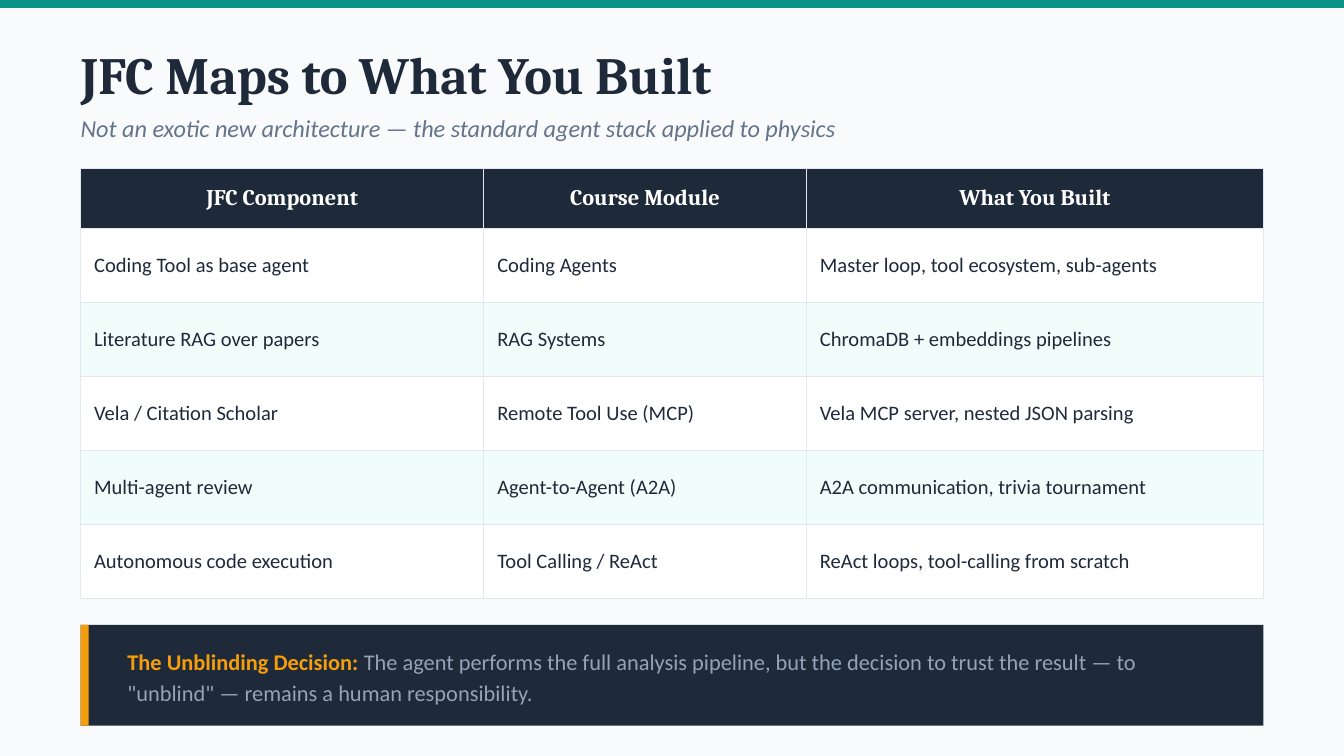
import dataclasses
import typing

import lxml.etree
import pptx
import pptx.dml.color
import pptx.enum.shapes
import pptx.enum.text
import pptx.oxml.ns
import pptx.util

EMU_PER_PX = 4572
LEFT, WIDTH = 120, 1760
CALLOUT_TOP, CALLOUT_HEIGHT = 930, 150

Align = pptx.enum.text.PP_ALIGN
Anchor = pptx.enum.text.MSO_ANCHOR


@dataclasses.dataclass(frozen=True)
class Theme:
    background: str = "F8FAFC"
    teal: str = "0D9488"
    navy: str = "1E2A3A"
    slate: str = "64748B"
    mist: str = "94A3B8"
    amber: str = "F59E0B"
    white: str = "FFFFFF"
    mint: str = "F0FDFA"
    border: str = "E2E8F0"
    heading_font: str = "Cambria"
    body_font: str = "Calibri"
    title_size: int = 28
    subtitle_size: int = 13
    label_size: int = 12
    cell_size: int = 11


THEME = Theme()


@dataclasses.dataclass(frozen=True)
class Box:
    left: int
    top: int
    width: int
    height: int

    def emu(self) -> tuple[int, ...]:
        return tuple(px(value) for value in dataclasses.astuple(self))


@dataclasses.dataclass(frozen=True)
class TextStyle:
    color: str
    font: dict[str, typing.Any]


@dataclasses.dataclass(frozen=True)
class Panel:
    box: Box
    color: str


def px(value: int) -> pptx.util.Emu:
    return pptx.util.Emu(value * EMU_PER_PX)


def text_style(color: str, name: str, size: int, bold: bool = False,
               italic: bool = False) -> TextStyle:
    return TextStyle(color, {"name": name, "size": pptx.util.Pt(size),
                             "bold": bold, "italic": italic})


TITLE = text_style(THEME.navy, THEME.heading_font, THEME.title_size, bold=True)
SUBTITLE = text_style(THEME.slate, THEME.body_font, THEME.subtitle_size, italic=True)
HEADER = text_style(THEME.white, THEME.heading_font, THEME.label_size, bold=True)
CELL = text_style(THEME.navy, THEME.body_font, THEME.cell_size)
CALLOUT_LABEL = text_style(THEME.amber, THEME.body_font, THEME.label_size, bold=True)
CALLOUT_TEXT = text_style(THEME.mist, THEME.body_font, THEME.label_size)

PANELS = [
    Panel(Box(0, 0, 2000, 12), THEME.teal),
    Panel(Box(LEFT, CALLOUT_TOP, WIDTH, CALLOUT_HEIGHT), THEME.navy),
    Panel(Box(LEFT, CALLOUT_TOP, 12, CALLOUT_HEIGHT), THEME.amber),
]
COLUMN_WIDTHS = [600, 480, 680]
ROW_HEIGHTS = [90] + [110] * 5
ROWS = [
    ("JFC Component", "Course Module", "What You Built"),
    ("Coding Tool as base agent", "Coding Agents", "Master loop, tool ecosystem, sub-agents"),
    ("Literature RAG over papers", "RAG Systems", "ChromaDB + embeddings pipelines"),
    ("Vela / Citation Scholar", "Remote Tool Use (MCP)", "Vela MCP server, nested JSON parsing"),
    ("Multi-agent review", "Agent-to-Agent (A2A)", "A2A communication, trivia tournament"),
    ("Autonomous code execution", "Tool Calling / ReAct", "ReAct loops, tool-calling from scratch"),
]


def set_attributes(target: typing.Any, values: dict[str, typing.Any]) -> None:
    for name, value in values.items():
        setattr(target, name, value)


def set_fill(fill: typing.Any, color: str) -> None:
    fill.solid()
    fill.fore_color.rgb = pptx.dml.color.RGBColor.from_string(color)


def add_run(paragraph: typing.Any, text: str, style: TextStyle) -> None:
    run = paragraph.add_run()
    run.text = text
    set_attributes(run.font, style.font)
    run.font.color.rgb = pptx.dml.color.RGBColor.from_string(style.color)


def add_panel(slide: typing.Any, panel: Panel) -> None:
    shape = slide.shapes.add_shape(
        pptx.enum.shapes.MSO_SHAPE.RECTANGLE, *panel.box.emu())
    shape.shadow.inherit = False
    set_fill(shape.fill, panel.color)
    shape.line.fill.background()


def format_frame(shape: typing.Any, margin: int | None = None) -> typing.Any:
    frame = shape.text_frame
    values = {"word_wrap": True, "vertical_anchor": Anchor.MIDDLE,
              "auto_size": pptx.enum.text.MSO_AUTO_SIZE.NONE}
    if margin is not None:
        for side in ("left", "top", "right", "bottom"):
            values[f"margin_{side}"] = px(margin)
    set_attributes(frame, values)
    paragraph = frame.paragraphs[0]
    paragraph.alignment = Align.LEFT
    return paragraph


def set_borders(cell: typing.Any) -> None:
    properties = cell._tc.get_or_add_tcPr()
    qualified = pptx.oxml.ns.qn
    for index, side in enumerate(("lnL", "lnR", "lnT", "lnB")):
        line = lxml.etree.Element(qualified(f"a:{side}"), w=str(pptx.util.Pt(0.5)))
        fill = lxml.etree.SubElement(line, qualified("a:solidFill"))
        lxml.etree.SubElement(fill, qualified("a:srgbClr"), val=THEME.border)
        properties.insert(index, line)


def add_module_table(slide: typing.Any) -> None:
    box = Box(LEFT, 250, WIDTH, sum(ROW_HEIGHTS))
    table = slide.shapes.add_table(len(ROWS), len(COLUMN_WIDTHS), *box.emu()).table
    for column, width in zip(table.columns, COLUMN_WIDTHS):
        column.width = px(width)
    for row_index, (row, height, texts) in enumerate(zip(table.rows, ROW_HEIGHTS, ROWS)):
        row.height = px(height)
        is_header = row_index == 0
        band = THEME.white if row_index % 2 else THEME.mint
        for cell, text in zip(row.cells, texts):
            cell.vertical_anchor = Anchor.MIDDLE
            set_fill(cell.fill, THEME.navy if is_header else band)
            set_borders(cell)
            paragraph = cell.text_frame.paragraphs[0]
            paragraph.alignment = Align.CENTER if is_header else Align.LEFT
            add_run(paragraph, text, HEADER if is_header else CELL)


def main() -> None:
    presentation = pptx.Presentation()
    presentation.slide_width, presentation.slide_height = px(2000), px(1125)
    slide = presentation.slides.add_slide(presentation.slide_layouts[5])
    set_fill(slide.background.fill, THEME.background)
    for panel in PANELS:
        add_panel(slide, panel)

    title = slide.shapes.title
    title_box = Box(LEFT, 50, 1800, 120)
    set_attributes(title, dict(zip(("left", "top", "width", "height"), title_box.emu())))
    add_run(format_frame(title, 0), "JFC Maps to What You Built", TITLE)

    subtitle = slide.shapes.add_textbox(*Box(LEFT, 160, 1800, 60).emu())
    add_run(format_frame(subtitle, 0),
            "Not an exotic new architecture — the standard agent stack applied to physics",
            SUBTITLE)

    add_module_table(slide)

    callout = slide.shapes.add_textbox(*Box(170, CALLOUT_TOP, 1660, CALLOUT_HEIGHT).emu())
    paragraph = format_frame(callout)
    paragraph.line_spacing = 1.15
    add_run(paragraph, "The Unblinding Decision: ", CALLOUT_LABEL)
    add_run(paragraph,
            "The agent performs the full analysis pipeline, but the decision to trust "
            'the result — to "unblind" — remains a human responsibility.', CALLOUT_TEXT)
    presentation.save("out.pptx")


if __name__ == "__main__":
    main()
